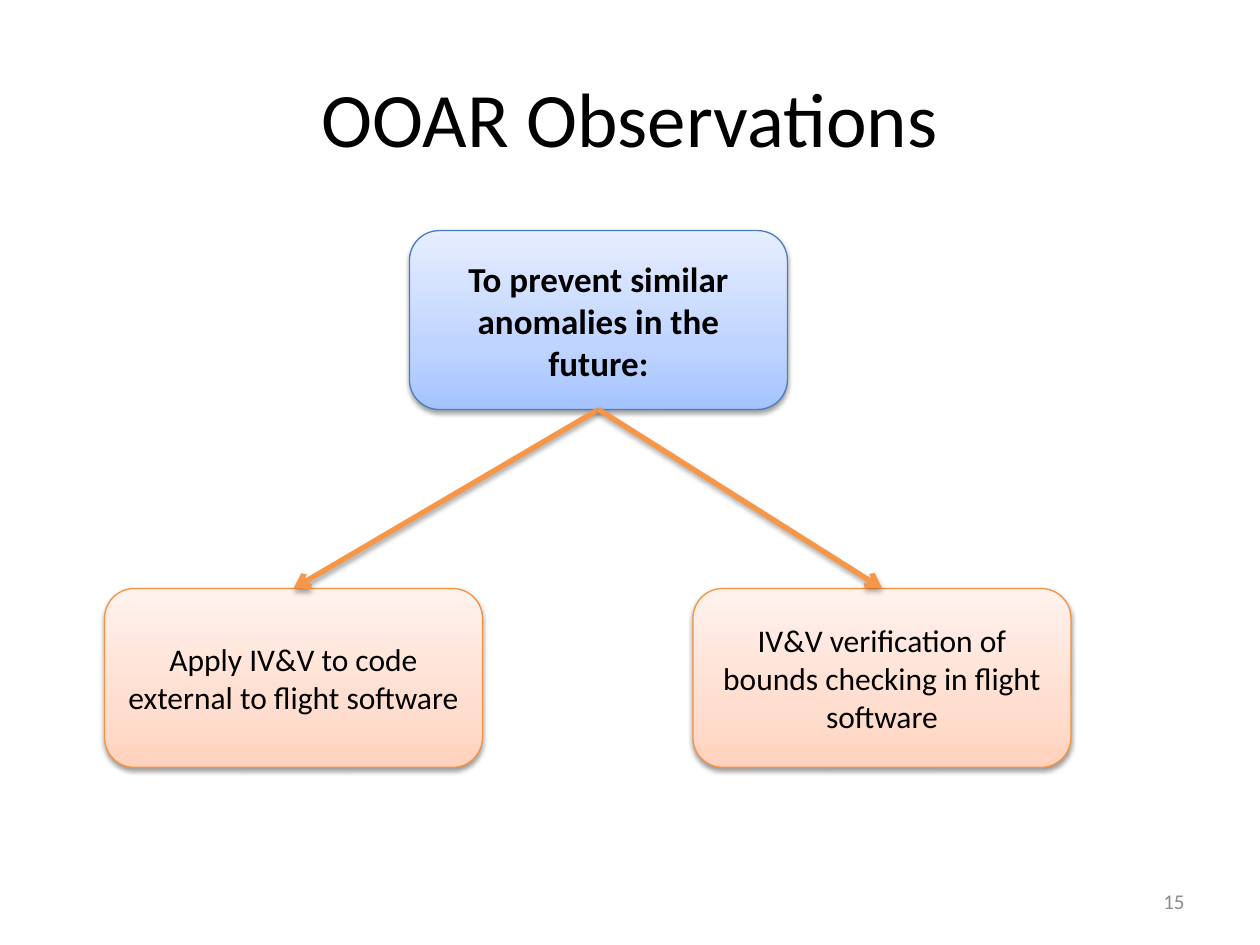
from copy import deepcopy
from dataclasses import dataclass

from lxml import etree
from pptx import Presentation
from pptx.dml.color import RGBColor
from pptx.enum.shapes import MSO_CONNECTOR, MSO_SHAPE
from pptx.enum.text import MSO_ANCHOR, PP_ALIGN
from pptx.oxml.ns import qn
from pptx.util import Inches, Pt

ROUNDED = MSO_SHAPE.ROUNDED_RECTANGLE
STRAIGHT = MSO_CONNECTOR.STRAIGHT
MIDDLE = MSO_ANCHOR.MIDDLE
CENTER, RIGHT = PP_ALIGN.CENTER, PP_ALIGN.RIGHT
TOP_SIDE, BOTTOM_SIDE = 0, 2

FONT = "Calibri"
BLACK, GREY, ARROW_ORANGE = "000000", "8C8C8C", "F79646"
BOX_WIDTH, BOX_HEIGHT = Inches(3), Inches(1.42)
STOP_POSITIONS = (0, 0.35, 1)


@dataclass(frozen=True)
class Palette:
    stops: tuple[str, str, str]  # from bottom to top
    outline: str


@dataclass(frozen=True)
class Box:
    text: str
    left: float
    top: float
    palette: Palette
    size: int = 18
    bold: bool = False


BLUE = Palette(("A4C4FF", "BFD4FF", "E6EEFF"), "4B7EBC")
ORANGE = Palette(("FFD2BD", "FFDED0", "FFF2ED"), "F69240")

GOAL = Box("To prevent similar anomalies in the future:", 3.25, 1.83, BLUE, 20, True)
ACTIONS = (
    Box("Apply IV&V to code external to flight software", 0.83, 4.67, ORANGE),
    Box("IV&V verification of bounds checking in flight software", 5.5, 4.67, ORANGE),
)


def color(value: str) -> RGBColor:
    return RGBColor.from_string(value)


def write_text(shape, text: str, size: int, align=CENTER, value=BLACK, bold=False) -> None:
    frame = shape.text_frame
    frame.word_wrap = True
    frame.vertical_anchor = MIDDLE
    para = frame.paragraphs[0]
    para.alignment = align
    span = para.add_run()
    span.text = text
    for name, setting in {"name": FONT, "size": Pt(size), "bold": bold}.items():
        setattr(span.font, name, setting)
    span.font.color.rgb = color(value)


def add_label(page, text: str, bounds: tuple, size: int, **text_format) -> None:
    label = page.shapes.add_textbox(*map(Inches, bounds))
    write_text(label, text, size, **text_format)


def add_shadow(effects, distance: float, opacity: int) -> None:
    """Put a soft downward shadow into an a:effectLst element."""
    shadow = etree.SubElement(
        effects, qn("a:outerShdw"), blurRad=str(Pt(3.1)), dist=str(Pt(distance)),
        dir="5400000", rotWithShape="0")
    shade = etree.SubElement(shadow, qn("a:srgbClr"), val=BLACK)
    etree.SubElement(shade, qn("a:alpha"), val=str(opacity * 1000))


def fill_gradient(shape, colors: tuple[str, str, str]) -> None:
    shape.fill.gradient()
    shape.fill.gradient_angle = 90
    stop_list = shape._element.spPr.find(".//" + qn("a:gsLst"))
    stop_list.append(deepcopy(stop_list[0]))
    for stop, value, position in zip(shape.fill.gradient_stops, colors, STOP_POSITIONS):
        stop.color.rgb = color(value)
        stop.position = position


def add_box(page, box: Box):
    shape = page.shapes.add_shape(
        ROUNDED, Inches(box.left), Inches(box.top), BOX_WIDTH, BOX_HEIGHT)
    fill_gradient(shape, box.palette.stops)
    shape.line.color.rgb = color(box.palette.outline)
    shape.line.width = Pt(0.75)
    shape.shadow.inherit = False
    add_shadow(shape._element.spPr.find(qn("a:effectLst")), 1.6, 38)
    write_text(shape, box.text, box.size, bold=box.bold)
    return shape


def add_arrow(page, source, target) -> None:
    arrow = page.shapes.add_connector(STRAIGHT, 0, 0, 0, 0)
    arrow.begin_connect(source, BOTTOM_SIDE)
    arrow.end_connect(target, TOP_SIDE)
    arrow.line.color.rgb = color(ARROW_ORANGE)
    arrow.line.width = Pt(3)
    properties = arrow._element.spPr
    etree.SubElement(properties.find(qn("a:ln")), qn("a:tailEnd"), type="arrow")
    add_shadow(etree.SubElement(properties, qn("a:effectLst")), 1.8, 35)


def main() -> None:
    deck = Presentation()
    deck.slide_width, deck.slide_height = Inches(10), Inches(7.5)
    page = deck.slides.add_slide(deck.slide_layouts[6])

    add_label(page, "OOAR Observations", (0.5, 0.3, 9, 1.25), 44)
    add_label(page, "15", (7.17, 6.95, 2.33, 0.4), 12, align=RIGHT, value=GREY)

    goal = add_box(page, GOAL)
    actions = [add_box(page, action) for action in ACTIONS]
    for action in actions:
        add_arrow(page, goal, action)

    deck.save("out.pptx")


if __name__ == "__main__":
    main()
